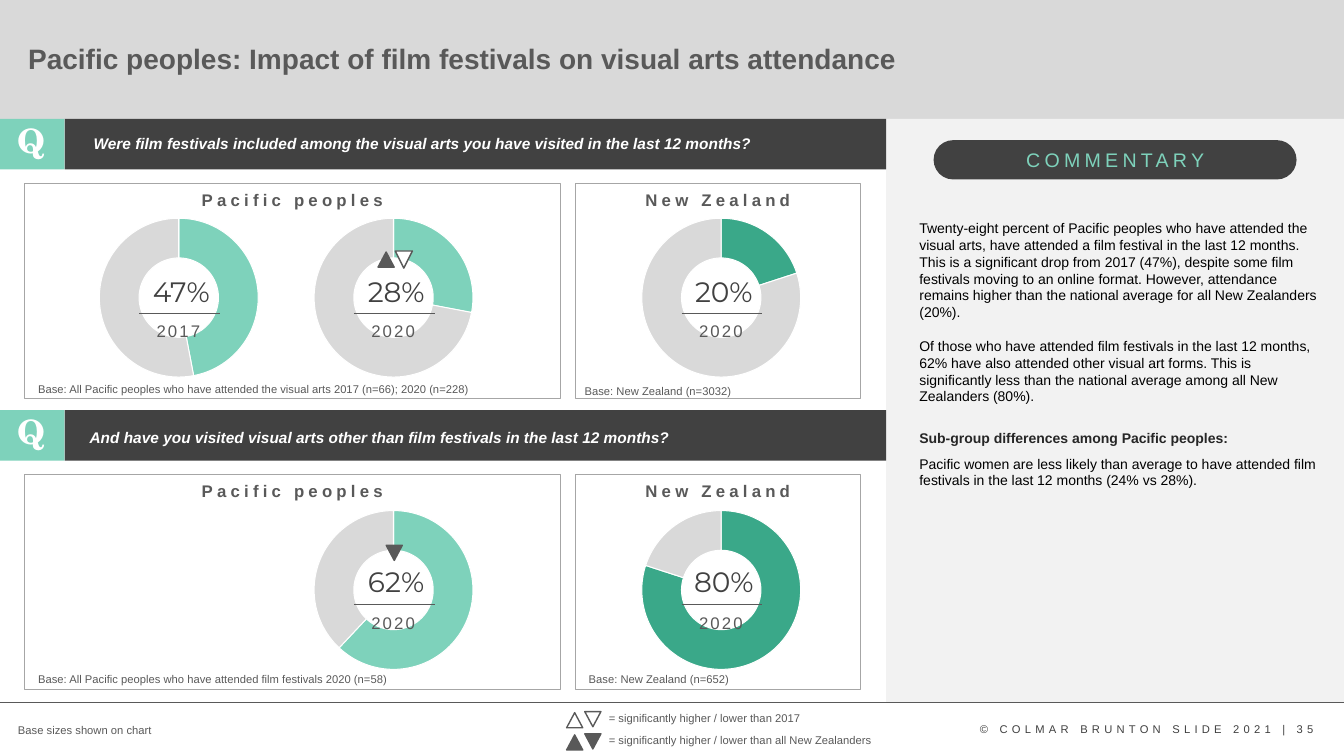
from lxml import etree
from pptx import Presentation
from pptx import util as u
from pptx.chart.data import CategoryChartData
from pptx.dml.color import RGBColor
from pptx.enum import chart as ch, shapes, text
from pptx.oxml import parse_xml
from pptx.oxml.ns import nsdecls, qn

COLOURS = {
    "header": "D9D9D9", "sidebar": "F2F2F2", "band": "414141", "mint": "7ED2BB",
    "green": "3AA889", "rest": "D9D9D9", "grey": "595959", "border": "A6A6A6",
    "white": "FFFFFF", "black": "000000", "heading": "262626", "footer": "404040",
}
SHAPE = shapes.MSO_SHAPE
CENTRE = text.PP_ALIGN.CENTER


def colour(name):
    return RGBColor.from_string(COLOURS[name])


def inches(box):
    return [u.Inches(round(value, 2)) for value in box]


def add_block(slide, box, fill=None, line=None, kind=SHAPE.RECTANGLE, weight=0.5):
    block = slide.shapes.add_shape(kind, *inches(box))
    block.shadow.inherit = False
    if fill:
        block.fill.solid()
        block.fill.fore_color.rgb = colour(fill)
    else:
        block.fill.background()
    if line:
        block.line.color.rgb = colour(line)
        block.line.width = u.Pt(weight)
    else:
        block.line.fill.background()
    return block


def add_rule(slide, left, top, width):
    rule = slide.shapes.add_connector(
        shapes.MSO_CONNECTOR.STRAIGHT, *inches((left, top, left + width, top)))
    rule.line.color.rgb = colour("grey")
    rule.line.width = u.Pt(0.5)
    etree.SubElement(rule._element.spPr, qn("a:effectLst"))


def style(paragraph, size, tone, bold=False, italic=False, font="Arial", tracking=0):
    for run in paragraph.runs:
        run.font.size = u.Pt(size)
        run.font.name = font
        run.font.bold = bold
        run.font.italic = italic
        run.font.color.rgb = colour(tone)
        if tracking:
            run._r.get_or_add_rPr().set("spc", str(int(tracking * 100)))


def add_label(slide, box, words, size, tone, align=None, wrap=True, **look):
    label = slide.shapes.add_textbox(*inches(box))
    frame = label.text_frame
    frame.word_wrap = wrap
    frame.text = words
    frame.paragraphs[0].alignment = align
    style(frame.paragraphs[0], size, tone, **look)
    return frame


def add_marker(slide, left, top, fill, down=False, size=(0.16, 0.15)):
    marker = add_block(slide, (left, top, *size), fill, "grey", SHAPE.ISOSCELES_TRIANGLE, 1)
    marker.rotation = 180 if down else 0


def add_header(slide, box):
    left, top, width, height = box
    add_block(slide, box, "header")
    title = add_label(slide, (left + 0.18, top + 0.23, 11.19, 0.78),
                      "Pacific peoples: Impact of film festivals on visual arts attendance",
                      20, "grey", bold=True)
    title.vertical_anchor = text.MSO_ANCHOR.MIDDLE
    title.paragraphs[0].line_spacing = 0.9


def add_question_band(slide, box, words, inset):
    left, top, width, height = box
    icon_width = 0.64
    add_block(slide, (left + icon_width, top, width - icon_width, height), "band")
    add_block(slide, (left, top, icon_width, height), "mint")
    add_label(slide, (left + 0.08, top - 0.04, 0.47, 0.5), "Q", 24, "white", CENTRE,
              bold=True, font="TeX Gyre Schola")
    dx, dy = inset
    question = add_label(slide, (left + dx, top + dy, 7.6, 0.46), words, 11, "white",
                         bold=True, italic=True)
    question.paragraphs[0].line_spacing = 0.9


def add_dial(slide, box, share, year, tone):
    left, top, width, height = box
    data = CategoryChartData()
    data.categories = ["1", "2"]
    data.add_series("Series 1", (share, 100 - share))
    dial = slide.shapes.add_chart(ch.XL_CHART_TYPE.DOUGHNUT, *inches(box), data).chart
    dial.has_legend = False
    dial.has_title = False
    dial.font.size = u.Pt(12)
    dial.font.name = "Arial"
    dial.font.color.rgb = colour("white")
    ring = dial.plots[0]
    ring.vary_by_categories = False
    ring._element.find(qn("c:holeSize")).set("val", "74")
    for index, part in enumerate((tone, "rest")):
        slice_format = ring.series[0].points[index].format
        slice_format.fill.solid()
        slice_format.fill.fore_color.rgb = colour(part)
        slice_format.line.color.rgb = colour("white")
        slice_format.line.width = u.Pt(0.75)
    plot_area = dial._chartSpace.chart.plotArea
    for layout in plot_area.findall(qn("c:layout")):
        plot_area.remove(layout)
    plot_area.insert(0, parse_xml(
        f'<c:layout {nsdecls("c")}><c:manualLayout><c:layoutTarget val="inner"/>'
        '<c:xMode val="edge"/><c:yMode val="edge"/><c:x val="0.209"/><c:y val="0.118"/>'
        '<c:w val="0.604"/><c:h val="0.793"/></c:manualLayout></c:layout>'))
    add_label(slide, (left + 0.93, top + 0.73, 0.86, 0.44), f"{share}%", 20, "band",
              CENTRE, wrap=False, font="Montserrat")
    add_label(slide, (left + 1, top + 1.2, 0.66, 0.3), year, 12, "grey",
              CENTRE, wrap=False, tracking=1.5)
    add_rule(slide, left + 0.94, top + 1.18, 0.8)


def add_panel(slide, box, heading, dials, base, base_offset):
    left, top, width, height = box
    add_block(slide, box, line="border")
    for dx, share, year, tone in dials:
        add_dial(slide, (left + dx, top + 0.115, 2.61, 1.99), share, year, tone)
    add_label(slide, (left + 0.13, top + 0.01, width - 0.26, 0.3), heading, 12, "grey",
              CENTRE, bold=True, tracking=3)
    dx, dy = base_offset
    add_label(slide, (left + dx, top + dy, width, 0.24), base, 8, "grey", wrap=False)


def add_question(slide, box, words, inset, pacific, zealand):
    left, top, width, height = box
    add_question_band(slide, (left, top, width, 0.5), words, inset)
    panel_top, panel_height = top + 0.64, height - 0.64
    add_panel(slide, (left + 0.24, panel_top, 5.32, panel_height), "Pacific peoples", *pacific)
    add_panel(slide, (left + 5.71, panel_top, 2.82, panel_height), "New Zealand", *zealand)


def add_commentary(slide, box):
    left, top, width, height = box
    add_block(slide, box, "sidebar")
    pill = add_block(slide, (left + 0.47, top + 0.21, 3.6, 0.39), "band",
                     kind=SHAPE.ROUNDED_RECTANGLE)
    pill.adjustments[0] = 0.5
    add_label(slide, (left + 1.29, top + 0.24, 2.02, 0.34), "COMMENTARY", 14, "mint",
              wrap=False, tracking=3)
    remarks = [
        ("Twenty-eight percent of Pacific peoples who have attended the visual arts, have "
         "attended a film festival in the last 12 months. This is a significant drop from "
         "2017 (47%), despite some film festivals moving to an online format. However, "
         "attendance remains higher than the national average for all New Zealanders (20%).",
         0, "black", False),
        ("Of those who have attended film festivals in the last 12 months, 62% have also "
         "attended other visual art forms. This is significantly less than the national "
         "average among all New Zealanders (80%).", 12, "black", False),
        ("Sub-group differences among Pacific peoples:", 18, "heading", True),
        ("Pacific women are less likely than average to have attended film festivals in the "
         "last 12 months (24% vs 28%).", 6, "black", False),
    ]
    frame = add_label(slide, (left + 0.23, top + 0.95, 4.15, 3.05), remarks[0][0], 10, "black")
    for words, gap, tone, bold in remarks[1:]:
        remark = frame.add_paragraph()
        remark.text = words
        remark.space_before = u.Pt(gap)
        style(remark, 10, tone, bold=bold)


def add_footer(slide, box):
    left, top, width, height = box
    add_rule(slide, left, top, width)
    add_label(slide, (left + 0.08, top + 0.16, 3.49, 0.24), "Base sizes shown on chart", 8, "grey")
    add_label(slide, (left + 9.62, top + 0.15, 3.61, 0.24),
              "© COLMAR BRUNTON SLIDE 2021 | 35", 8, "footer", tracking=3)
    legend = [("white", "2017"), ("grey", "all New Zealanders")]
    for row, (fill, benchmark) in enumerate(legend):
        row_top = top + 0.04 + row * 0.225
        add_label(slide, (left + 5.94, row_top, 2.84, 0.24),
                  f"= significantly higher / lower than {benchmark}", 8, "grey", wrap=False)
        add_marker(slide, left + 5.62, row_top + 0.06, fill)
        add_marker(slide, left + 5.8, row_top + 0.05, fill, down=True)


def main():
    deck = Presentation()
    deck.slide_width, deck.slide_height = u.Inches(13.33), u.Inches(7.5)
    slide = deck.slides.add_slide(deck.slide_layouts[6])
    add_header(slide, (0, -0.02, 13.33, 1.2))
    add_commentary(slide, (8.79, 1.18, 4.54, 5.79))
    add_question(
        slide, (0, 1.18, 8.79, 2.77),
        "Were film festivals included among the visual arts you have visited in the last 12 months?",
        (0.83, 0.12),
        ([(0.2, 47, "2017", "mint"), (2.33, 28, "2020", "mint")],
         "Base: All Pacific peoples who have attended the visual arts 2017 (n=66); 2020 (n=228)",
         (0.04, 1.92)),
        ([(0.11, 20, "2020", "green")], "Base: New Zealand (n=3032)", (-0.01, 1.94)))
    add_question(
        slide, (0, 4.07, 8.79, 2.77),
        "And have you visited visual arts other than film festivals in the last 12 months?",
        (0.79, 0.15),
        ([(2.33, 62, "2020", "mint")],
         "Base: All Pacific peoples who have attended film festivals 2020 (n=58)", (0.04, 1.91)),
        ([(0.11, 80, "2020", "green")], "Base: New Zealand (n=652)", (0.03, 1.91)))
    add_marker(slide, 3.92, 2.49, "white", down=True, size=(0.17, 0.17))
    add_marker(slide, 3.75, 2.5, "grey")
    add_marker(slide, 3.83, 5.41, "grey", down=True)
    add_footer(slide, (0, 6.97, 13.33, 0.53))
    deck.save("out.pptx")


if __name__ == "__main__":
    main()
